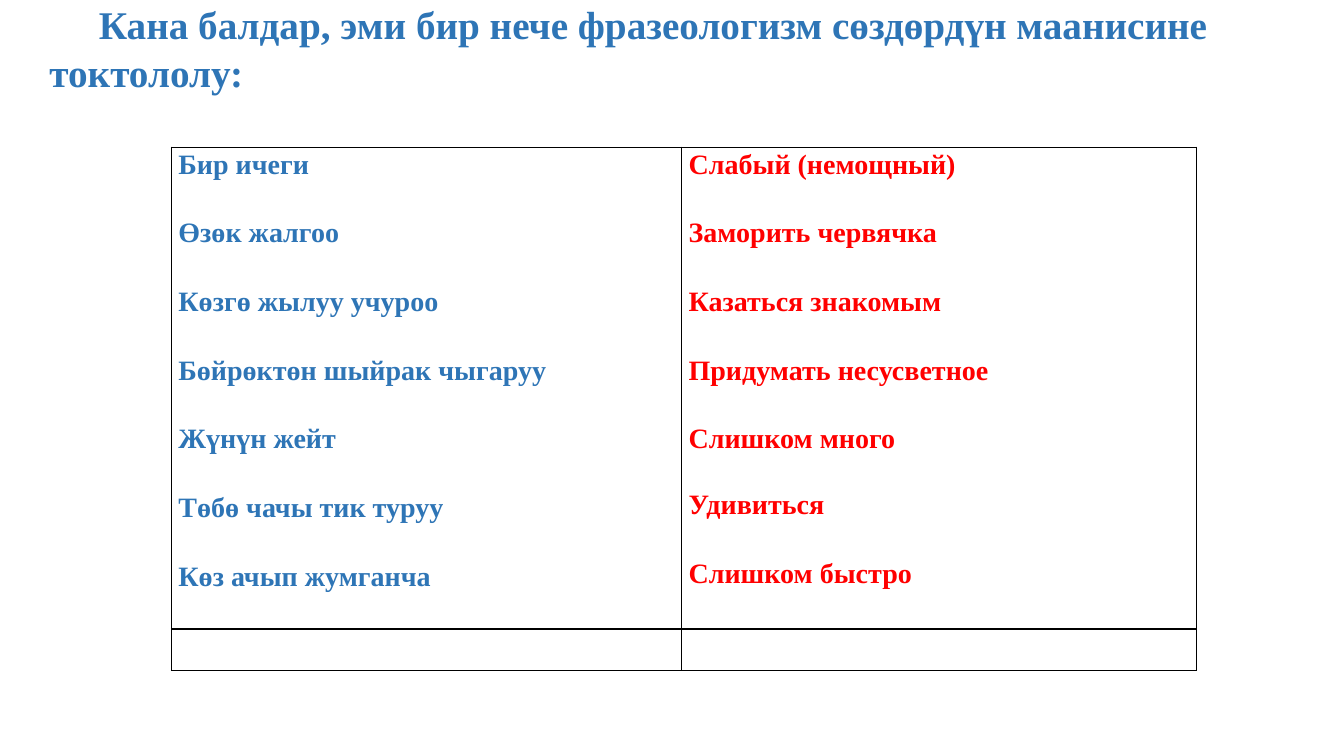
from lxml import etree
from pptx import Presentation
from pptx.dml.color import RGBColor
from pptx.enum.text import MSO_ANCHOR, MSO_AUTO_SIZE, PP_ALIGN
from pptx.oxml.ns import qn
from pptx.util import Inches, Pt

TOP = MSO_ANCHOR.TOP
LEFT = PP_ALIGN.LEFT
FIXED = MSO_AUTO_SIZE.NONE
FONT = "Times New Roman"
COLORS = {"blue": "2E75B6", "red": "FF0000", "line": "000000"}
TITLE = "Кана балдар, эми бир нече фразеологизм сөздөрдүн маанисине токтололу:"
PAIRS = [
    ("Бир ичеги", "Слабый (немощный)"),
    ("Өзөк жалгоо", "Заморить червячка"),
    ("Көзгө жылуу учуроо", "Казаться знакомым"),
    ("Бөйрөктөн шыйрак чыгаруу", "Придумать несусветное"),
    ("Жүнүн жейт", "Слишком много"),
    ("Төбө чачы тик туруу", "Удивиться"),
    ("Көз ачып жумганча", "Слишком быстро"),
]
GAP = 25.3
TIGHT = {"Удивиться": 23.3}


def style(para, size, color):
    para.alignment = LEFT
    font = para.font
    font.name, font.size, font.bold = FONT, Pt(size), True
    font.color.rgb = RGBColor.from_string(COLORS[color])


def add_title(slide):
    title = slide.shapes.title
    title.left, title.top = Inches(0.39), Inches(-0.07)
    title.width, title.height = Inches(12.64), Inches(1.51)
    frame = title.text_frame
    frame.word_wrap = True
    frame.auto_size = FIXED
    frame.vertical_anchor = TOP
    frame.text = TITLE
    para = frame.paragraphs[0]
    style(para, 28, "blue")
    para.line_spacing = 1.04
    props = para._p.get_or_add_pPr()
    props.set("marL", "0")
    props.set("indent", str(Inches(0.49)))


def add_border(cell):
    props = cell._tc.get_or_add_tcPr()
    for pos, side in enumerate(("lnL", "lnR", "lnT", "lnB")):
        line = etree.Element(qn(f"a:{side}"), w=str(Pt(1)))
        fill = etree.SubElement(line, qn("a:solidFill"))
        etree.SubElement(fill, qn("a:srgbClr"), val=COLORS["line"])
        props.insert(pos, line)


def fill_cell(cell, words, color):
    frame = cell.text_frame
    for num, word in enumerate(words):
        para = frame.add_paragraph() if num else frame.paragraphs[0]
        para.text = word
        style(para, 20, color)
        para.line_spacing = 1.07
        para.space_before = Pt(TIGHT.get(word, GAP) if num else 0)


def add_grid(slide):
    frame = slide.shapes.add_table(
        2, 2, Inches(1.7), Inches(1.46), Inches(10.17), Inches(5.19))
    table = frame.table
    table.first_row = table.horz_banding = False
    for col, width in zip(table.columns, (5.06, 5.11)):
        col.width = Inches(width)
    for row, height in zip(table.rows, (4.78, 0.41)):
        row.height = Inches(height)
    for cell in table.iter_cells():
        cell.margin_left = cell.margin_right = Inches(0.07)
        cell.margin_top = cell.margin_bottom = 0
        cell.fill.background()
        add_border(cell)
    for col, (words, color) in enumerate(zip(zip(*PAIRS), ("blue", "red"))):
        fill_cell(table.cell(0, col), words, color)


def main():
    deck = Presentation()
    deck.slide_width, deck.slide_height = Inches(13.33), Inches(7.5)
    slide = deck.slides.add_slide(deck.slide_layouts[5])
    add_grid(slide)
    add_title(slide)
    deck.save("out.pptx")


if __name__ == "__main__":
    main()
